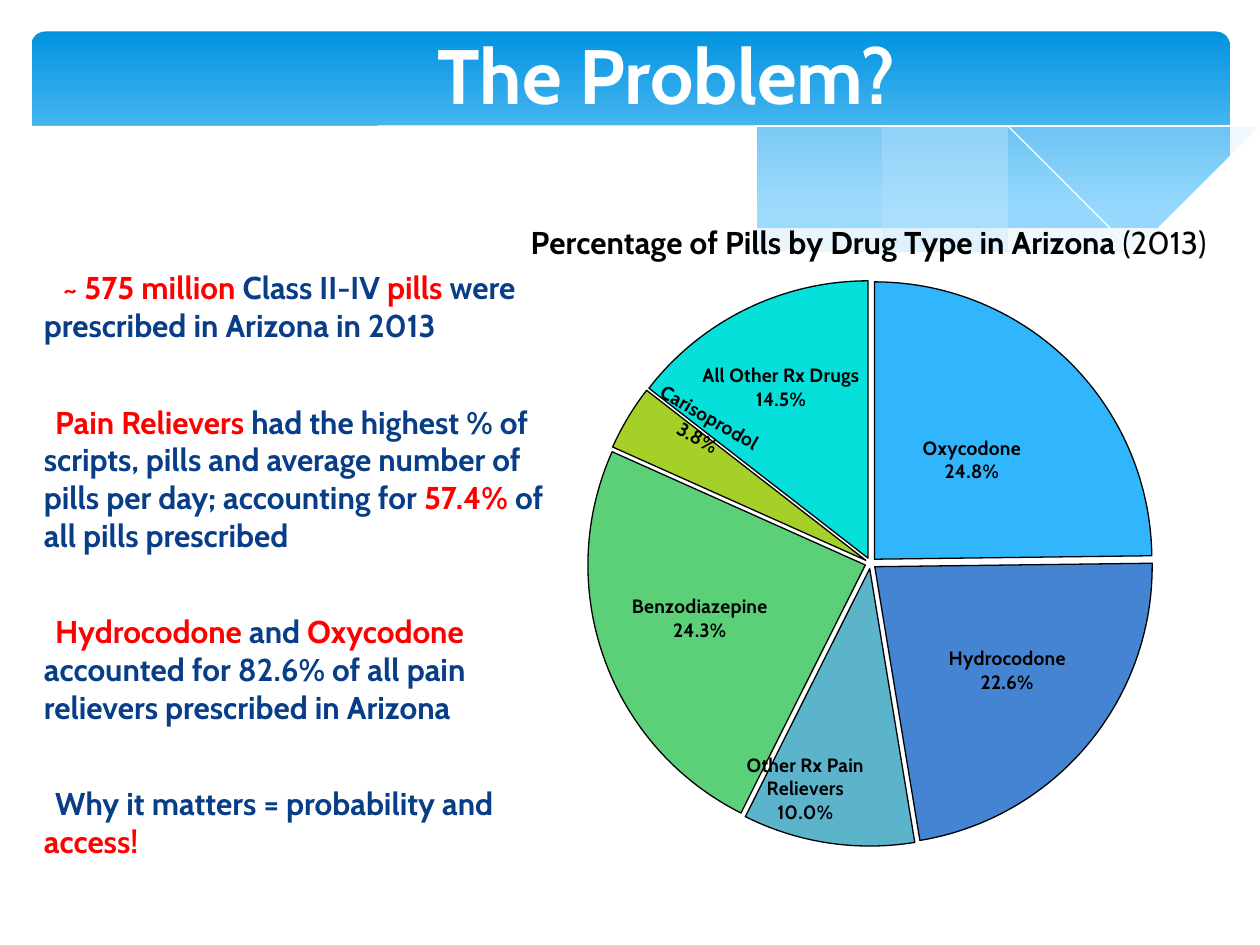
import pptx
import pptx.chart.data
import pptx.dml.color
import pptx.enum.chart
import pptx.enum.shapes
import pptx.enum.text
import pptx.oxml
import pptx.oxml.ns
import pptx.util
from pptx.util import Inches, Pt

RGBColor = pptx.dml.color.RGBColor
WHITE = RGBColor(0xFF, 0xFF, 0xFF)
BLACK = RGBColor(0, 0, 0)
NAVY = RGBColor(0x07, 0x3E, 0x87)
RED = RGBColor(0xFF, 0, 0)
BAND_TOP = RGBColor(0x02, 0x93, 0xE0)
BAND_BOTTOM = RGBColor(0x83, 0xD3, 0xFE)
WAVE = RGBColor(0xC6, 0xE7, 0xFC)
FONT = "Cabin"

# Content
TITLE = "The Problem?"
CHART_TITLE = [("Percentage of Pills by Drug Type in Arizona ", True), ("(2013)", False)]

# First-line indent in inches, then runs of text and colour
STATEMENTS = [
    (0.15, [("~ 575 million ", RED), ("Class II-IV ", NAVY), ("pills", RED),
            (" were prescribed in Arizona in 2013", NAVY)]),
    (0.09, [("Pain Relievers ", RED),
            ("had the highest % of scripts, pills and average number of pills per day; "
             "accounting for ", NAVY), ("57.4% ", RED), ("of all pills prescribed", NAVY)]),
    (0.09, [("Hydrocodone ", RED), ("and ", NAVY), ("Oxycodone ", RED),
            ("accounted for 82.6% of all pain relievers prescribed in Arizona", NAVY)]),
    (0.09, [("Why it matters = probability and ", NAVY), ("access!", RED)]),
]

# Drug, share, colour, label shift as a fraction of the chart, label rotation
DRUGS = [
    ("Oxycodone", 0.248, RGBColor(0x31, 0xB6, 0xFD), (0, 0), 0),
    ("Hydrocodone", 0.226, RGBColor(0x45, 0x84, 0xD3), (0.03, 0.02), 0),
    ("Other Rx Pain\nRelievers", 0.1, RGBColor(0x4B, 0xAC, 0xC6), (-0.05, 0.11), 0),
    ("Benzodiazepine", 0.243, RGBColor(0x5B, 0xD0, 0x78), (-0.04, 0.01), 0),
    ("Carisoprodol", 0.038, RGBColor(0xA5, 0xD0, 0x28), (-0.05, -0.08), 30),
    ("All Other Rx Drugs", 0.145, RGBColor(0x05, 0xE0, 0xDB), (-0.03, -0.06), 0),
]

# Knots of the header curves, in inches
RIGHT_WAVE = [
    [(9.76, 0.94), (9.22, 1.04), (8.62, 1.18), (7.8, 1.37), (7.07, 1.52), (6.62, 1.6)],
    [(6.62, 1.6), (7.19, 1.67), (7.7, 1.71), (8.15, 1.72), (8.64, 1.7), (9.07, 1.63),
     (9.44, 1.54), (9.77, 1.42)],
]
LONG_WAVE = [
    [(8.94, 1.67), (8.38, 1.6), (7.42, 1.42), (6.3, 1.16), (5.55, 1), (4.89, 0.89),
     (4.2, 0.82), (3.62, 0.8), (3.14, 0.82), (2.87, 0.86)],
    [(2.87, 0.86), (3.63, 0.97), (4.5, 1.16), (5.67, 1.43), (6.51, 1.58), (7.23, 1.68),
     (7.86, 1.73), (8.39, 1.73), (8.94, 1.67)],
]
FALLING_LINE = [[(3.1, 0.9), (3.44, 0.84), (4.02, 0.81), (4.69, 0.83), (5.57, 0.91),
                 (6.66, 1.08), (7.61, 1.28), (8.32, 1.45), (9.08, 1.66)]]
RISING_LINE = [[(6.14, 1.51), (6.96, 1.3), (7.77, 1.11), (8.67, 0.93), (9.25, 0.84),
                (9.76, 0.8)]]
WHITE_WAVE = [
    [(9.77, 1.41), (9.4, 1.54), (8.99, 1.64), (8.5, 1.7), (7.93, 1.71), (7.26, 1.67),
     (6.47, 1.57), (5.55, 1.39), (4.47, 1.14), (3.65, 0.96), (2.92, 0.85), (2.3, 0.79),
     (1.77, 0.78), (1.19, 0.82), (0.75, 0.89), (0.46, 0.98), (0.23, 1.07)],
    [(0.23, 2.24), (9.77, 2.24)],
]


def add_text(paragraph, text, size=18, color=BLACK, bold=True):
    run = paragraph.add_run()
    run.text = text
    run.font.name = FONT
    run.font.size = Pt(size)
    run.font.bold = bold
    run.font.color.rgb = color


def smooth(knots, steps=6):
    """Points of a Catmull-Rom curve through the knots."""
    if len(knots) < 3:
        return list(knots)
    padded = [knots[0], *knots, knots[-1]]
    points = [knots[0]]
    for a, b, c, d in zip(padded, padded[1:], padded[2:], padded[3:]):
        for step in range(1, steps + 1):
            t = step / steps
            points.append(tuple(
                (2 * q + (r - p) * t + (2 * p - 5 * q + 4 * r - s) * t ** 2
                 + (3 * q - p - 3 * r + s) * t ** 3) / 2
                for p, q, r, s in zip(a, b, c, d)))
    return points


def set_alpha(element, percent):
    color = element.xpath(".//a:solidFill/a:srgbClr")[0]
    alpha = color.makeelement(pptx.oxml.ns.qn("a:alpha"), {"val": str(percent * 1000)})
    color.append(alpha)


def add_wave(slide, curves, color=None, opacity=100):
    """A filled area, or an open white hairline when no colour is given."""
    points = [point for curve in curves for point in smooth(curve)]
    builder = slide.shapes.build_freeform(*points[0], scale=float(Inches(1)))
    builder.add_line_segments(points[1:], close=color is not None)
    shape = builder.convert_to_shape()
    shape.shadow.inherit = False
    if color is None:
        shape.fill.background()
        shape.line.color.rgb = WHITE
        shape.line.width = 0
        return
    shape.fill.solid()
    shape.fill.fore_color.rgb = color
    shape.line.fill.background()
    if opacity < 100:
        set_alpha(shape._element, opacity)


def manual_layout(x, y, absolute=False):
    modes = '<c:xMode val="edge"/><c:yMode val="edge"/>' if absolute else ""
    return f'<c:layout><c:manualLayout>{modes}<c:x val="{x}"/><c:y val="{y}"/></c:manualLayout></c:layout>'


def label_format(rotation=0):
    return (
        '<c:numFmt formatCode="0.0%" sourceLinked="0"/><c:spPr><a:noFill/></c:spPr>'
        f'<c:txPr><a:bodyPr rot="{rotation * 60000}"/><a:p><a:pPr><a:defRPr sz="1100" b="1">'
        f'<a:solidFill><a:srgbClr val="{BLACK}"/></a:solidFill><a:latin typeface="{FONT}"/>'
        '</a:defRPr></a:pPr><a:endParaRPr lang="en-US"/></a:p></c:txPr><c:dLblPos val="ctr"/>'
        '<c:showLegendKey val="0"/><c:showVal val="1"/><c:showCatName val="1"/>'
        '<c:showSerName val="0"/><c:showPercent val="0"/><c:showBubbleSize val="0"/>'
        '<c:separator>\n</c:separator>')


def add_pie(slide):
    data = pptx.chart.data.CategoryChartData(number_format="0.0%")
    data.categories = [drug[0] for drug in DRUGS]
    data.add_series("Series 1", [drug[1] for drug in DRUGS])
    chart = slide.shapes.add_chart(
        pptx.enum.chart.XL_CHART_TYPE.PIE, Inches(3.42), Inches(1.25), Inches(6.91),
        Inches(6.02), data).chart
    chart.has_legend = False
    chart.font.name = FONT
    chart.font.size = Pt(10)
    chart.font.color.rgb = BLACK
    chart.plots[0].vary_by_categories = True
    namespaces = pptx.oxml.ns.nsdecls("c", "a")

    # Title and plot area
    paragraph = chart.chart_title.text_frame.paragraphs[0]
    for text, bold in CHART_TITLE:
        add_text(paragraph, text, bold=bold)
    places = [(chart.chart_title._element, 1, (0.11, 0.08), ""),
              (chart._chartSpace.xpath("c:chart/c:plotArea")[0], 0, (0.18, 0.09),
               '<c:w val="0.65"/><c:h val="0.89"/>')]
    for parent, index, place, size in places:
        for old in parent.xpath("c:layout"):
            parent.remove(old)
        xml = manual_layout(*place, absolute=True).replace("</c:manualLayout>", size + "</c:manualLayout>")
        if size:
            xml = xml.replace("<c:xMode", '<c:layoutTarget val="inner"/><c:xMode')
        parent.insert(index, pptx.oxml.parse_xml(xml.replace("<c:layout>", f"<c:layout {namespaces}>")))

    # Slices
    series = chart.plots[0].series[0]
    element = series._element
    series.format.line.color.rgb = BLACK
    for index, drug in enumerate(DRUGS):
        slice_format = series.points[index].format
        slice_format.fill.solid()
        slice_format.fill.fore_color.rgb = drug[2]
        slice_format.line.color.rgb = BLACK
        slice_format.line.width = Pt(0.75)
    set_alpha(element.xpath("c:dPt")[2], 90)
    element.xpath("c:spPr")[0].addnext(
        pptx.oxml.parse_xml(f'<c:explosion {namespaces} val="2"/>'))

    # Labels
    labels = "".join(
        f'<c:dLbl><c:idx val="{index}"/>{manual_layout(*shift)}{label_format(rotation)}</c:dLbl>'
        for index, (*_, shift, rotation) in enumerate(DRUGS) if shift != (0, 0))
    element.xpath("c:cat")[0].addprevious(pptx.oxml.parse_xml(
        f'<c:dLbls {namespaces}>{labels}{label_format()}<c:showLeaderLines val="0"/></c:dLbls>'))


def main():
    presentation = pptx.Presentation()
    presentation.slide_width, presentation.slide_height = Inches(10), Inches(7.5)
    slide = presentation.slides.add_slide(presentation.slide_layouts[5])

    # Header band and waves
    band = slide.shapes.add_shape(
        pptx.enum.shapes.MSO_SHAPE.ROUNDED_RECTANGLE, Inches(0.25), Inches(0.25),
        Inches(9.51), Inches(1.56))
    band.adjustments[0] = 0.07
    band.shadow.inherit = False
    band.line.fill.background()
    band.fill.gradient()
    band.fill.gradient_angle = 270
    for stop, color, position in zip(band.fill.gradient_stops, (BAND_TOP, BAND_BOTTOM), (0, 0.9)):
        stop.color.rgb = color
        stop.position = position
    add_wave(slide, RIGHT_WAVE, WAVE, 29)
    add_wave(slide, LONG_WAVE, WAVE, 40)
    add_wave(slide, FALLING_LINE)
    add_wave(slide, RISING_LINE)
    add_wave(slide, WHITE_WAVE, WHITE)

    # Title, in front of the header
    title = slide.shapes.title
    title.left, title.top, title.width, title.height = map(Inches, (1.04, 0.08, 8.5, 0.92))
    title.text_frame.vertical_anchor = pptx.enum.text.MSO_ANCHOR.BOTTOM
    title.text_frame.paragraphs[0].alignment = pptx.enum.text.PP_ALIGN.CENTER
    add_text(title.text_frame.paragraphs[0], TITLE, size=44, color=WHITE)
    slide.shapes._spTree.append(title._element)

    # Statements
    frame = slide.shapes.add_textbox(
        Inches(0.25), Inches(2.08), Inches(4.17), Inches(5.42)).text_frame
    frame.word_wrap = True
    for index, (indent, runs) in enumerate(STATEMENTS):
        paragraph = frame.add_paragraph() if index else frame.paragraphs[0]
        paragraph._p.get_or_add_pPr().set("indent", str(Inches(indent)))
        if index:
            paragraph.space_before = Pt(33.5)
        for text, color in runs:
            add_text(paragraph, text, color=color)

    add_pie(slide)
    presentation.save("out.pptx")


if __name__ == "__main__":
    main()
